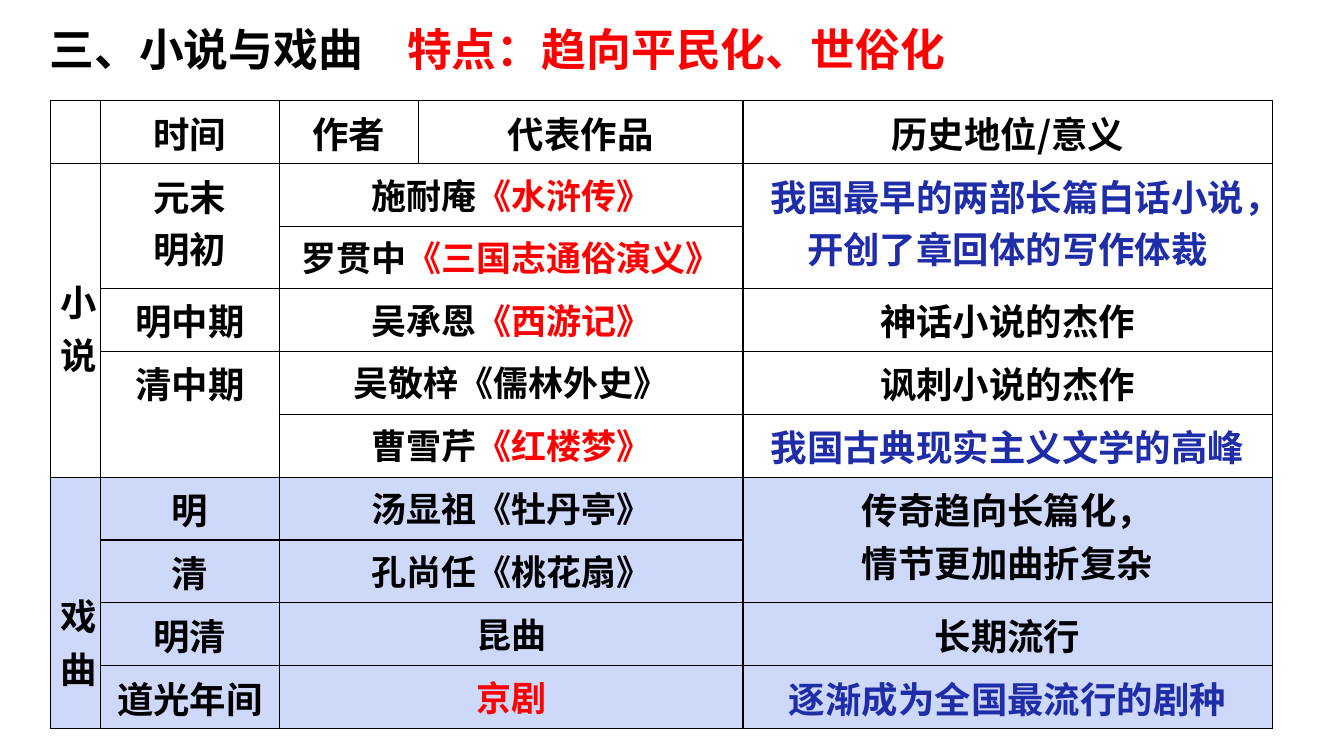
from lxml.etree import SubElement
from pptx import Presentation
from pptx.dml.color import RGBColor
from pptx.enum.text import MSO_ANCHOR, PP_ALIGN
from pptx.oxml import parse_xml
from pptx.oxml.ns import nsdecls, qn
from pptx.util import Inches, Pt

FONT = "Noto Sans CJK SC"
BLACK, RED, BLUE, PALE = "000000", "FF0000", "1F2DA8", "CED8F9"
COLUMN_WIDTHS = [0.5, 1.77, 1.38, 3.22, 5.25]
ROW_HEIGHT = 0.62
DRAMA_START = 6
HEADINGS = ["时间", "作者", "代表作品", "历史地位/意义"]
PERIODS = [
    (1, 2, "元末\n明初"), (3, 1, "明中期"), (4, 2, "清中期"),
    (6, 1, "明"), (7, 1, "清"), (8, 1, "明清"), (9, 1, "道光年间"),
]
WORKS = [
    ("施耐庵", "《水浒传》"), ("罗贯中", "《三国志通俗演义》"),
    ("吴承恩", "《西游记》"), ("吴敬梓《儒林外史》", ""),
    ("曹雪芹", "《红楼梦》"), ("汤显祖《牡丹亭》", ""),
    ("孔尚任《桃花扇》", ""), ("昆曲", ""), ("", "京剧"),
]
MEANINGS = [
    (1, 2, "我国最早的两部长篇白话小说，开创了章回体的写作体裁", BLUE),
    (3, 1, "神话小说的杰作", BLACK), (4, 1, "讽刺小说的杰作", BLACK),
    (5, 1, "我国古典现实主义文学的高峰", BLUE),
    (6, 2, "传奇趋向长篇化，\n情节更加曲折复杂", BLACK),
    (8, 1, "长期流行", BLACK), (9, 1, "逐渐成为全国最流行的剧种", BLUE),
]
GENRES = [(1, 5, "小说"), (DRAMA_START, 4, "戏曲")]


def paint(target, color):
    target.solid()
    target.fore_color.rgb = RGBColor.from_string(color)


def add_text(para, text, size=26, color=BLACK, align=PP_ALIGN.CENTER):
    para.alignment = align
    span = para.add_run()
    span.text = text
    span.font.size = Pt(size)
    span.font.bold = True
    span.font.name = FONT
    paint(span.font.fill, color)
    SubElement(span.font._element, qn("a:ea")).set("typeface", FONT)


def fill_cell(cell, text, **style):
    for index, line in enumerate(text.split("\n")):
        frame = cell.text_frame
        para = frame.add_paragraph() if index else frame.paragraphs[0]
        add_text(para, line, **style)


def merged(table, row, column, height=1, width=1):
    cell = table.cell(row, column)
    if height * width > 1:
        cell.merge(table.cell(row + height - 1, column + width - 1))
    return cell


def add_borders(cell):
    properties = cell._tc.get_or_add_tcPr()
    for side in ("lnL", "lnR", "lnT", "lnB"):
        properties.append(parse_xml(
            f'<a:{side} {nsdecls("a")} w="12700"><a:solidFill>'
            f'<a:srgbClr val="{BLACK}"/></a:solidFill></a:{side}>'))


def add_grid(page):
    rows = len(WORKS) + 1
    table = page.shapes.add_table(
        rows, len(COLUMN_WIDTHS), Inches(0.5), Inches(1),
        Inches(sum(COLUMN_WIDTHS)), Inches(ROW_HEIGHT * rows)).table
    table.first_row = table.horz_banding = False
    for column, width in zip(table.columns, COLUMN_WIDTHS):
        column.width = Inches(width)
    for index, row in enumerate(table.rows):
        row.height = Inches(ROW_HEIGHT)
        for cell in row.cells:
            add_borders(cell)
            if index >= DRAMA_START:
                paint(cell.fill, PALE)
            else:
                cell.fill.background()
    return table


def add_contents(table):
    for column, heading in enumerate(HEADINGS, 1):
        fill_cell(table.cell(0, column), heading)
    for row, height, genre in GENRES:
        cell = merged(table, row, 0, height)
        cell.margin_top = Inches(1.1)
        fill_cell(cell, genre)
    for row, height, period in PERIODS:
        fill_cell(merged(table, row, 1, height), period)
    for row, parts in enumerate(WORKS, 1):
        para = merged(table, row, 2, width=2).text_frame.paragraphs[0]
        for text, color in zip(parts, (BLACK, RED)):
            if text:
                add_text(para, text, size=25, color=color)
    for row, height, meaning, color in MEANINGS:
        fill_cell(merged(table, row, 4, height), meaning, color=color)


def add_heading(box, text, left, width, color):
    box.left, box.top = Inches(left), Inches(0.16)
    box.width, box.height = Inches(width), Inches(0.64)
    frame = box.text_frame
    frame.word_wrap = True
    frame.vertical_anchor = MSO_ANCHOR.MIDDLE
    add_text(frame.paragraphs[0], text, size=32, color=color, align=PP_ALIGN.LEFT)


def main():
    deck = Presentation()
    deck.slide_width, deck.slide_height = Inches(13.33), Inches(7.5)
    page = deck.slides.add_slide(deck.slide_layouts[5])
    add_contents(add_grid(page))
    add_heading(page.shapes.title, "三、小说与戏曲", 0.39, 9.61, BLACK)
    feature = page.shapes.add_textbox(0, 0, 0, 0)
    add_heading(feature, "特点：趋向平民化、世俗化", 3.94, 6.67, RED)
    deck.save("out.pptx")


if __name__ == "__main__":
    main()
